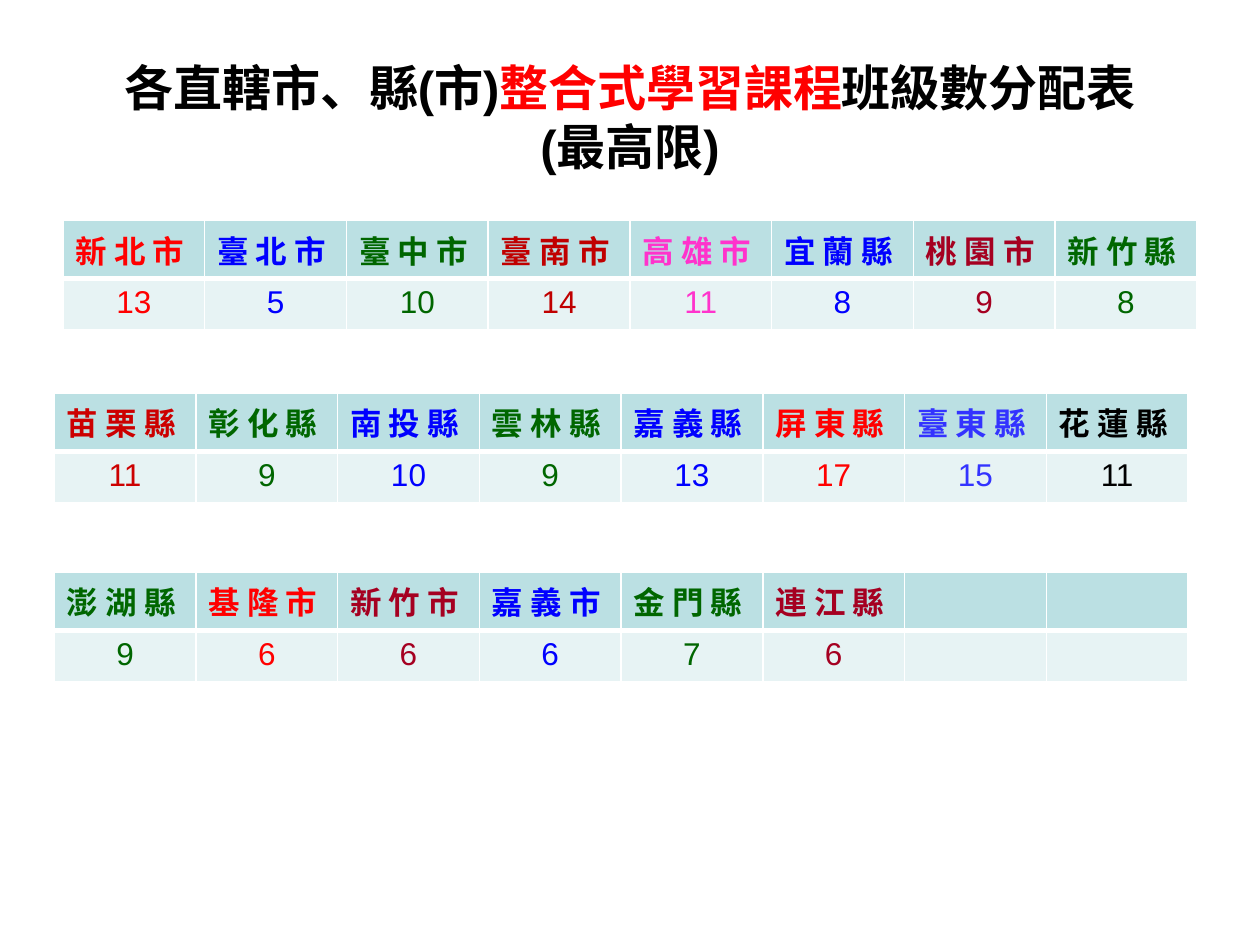
from lxml.etree import SubElement
from pptx import Presentation
from pptx.dml.color import RGBColor as Rgb
from pptx.enum.text import MSO_ANCHOR as Anchor, MSO_AUTO_SIZE as AutoSize, PP_ALIGN as Align
from pptx.oxml.ns import qn
from pptx.util import Inches, Pt

BLACK, WHITE, RED, BLUE, GREEN = "000000", "FFFFFF", "FF0000", "0000FF", "006600"
BRICK, PINK, WINE, SCARLET, VIOLET = "C00000", "FF33CC", "A50021", "CC0000", "3333FF"
HEADER_FILL, VALUE_FILL = "BBE0E3", "E7F3F4"
COLUMNS = 8

MUNICIPALITIES = [
    ("新 北 市", 13, RED), ("臺 北 市", 5, BLUE), ("臺 中 市", 10, GREEN),
    ("臺 南 市", 14, BRICK), ("高 雄 市", 11, PINK), ("宜 蘭 縣", 8, BLUE),
    ("桃 園 市", 9, WINE), ("新 竹 縣", 8, GREEN),
]
COUNTIES = [
    ("苗 栗 縣", 11, SCARLET), ("彰 化 縣", 9, GREEN), ("南 投 縣", 10, BLUE),
    ("雲 林 縣", 9, GREEN), ("嘉 義 縣", 13, BLUE), ("屏 東 縣", 17, RED),
    ("臺 東 縣", 15, VIOLET), ("花 蓮 縣", 11, BLACK),
]
ISLANDS_AND_CITIES = [
    ("澎 湖 縣", 9, GREEN), ("基 隆 市", 6, RED), ("新 竹 市", 6, WINE),
    ("嘉 義 市", 6, BLUE), ("金 門 縣", 7, GREEN), ("連 江 縣", 6, WINE),
]


def color(value):
    """Turn a hex string into a colour."""
    return Rgb.from_string(value)


def add_text(para, text, size=18, fill=BLACK, bold=False, align=None):
    """Add a formatted span to a paragraph."""
    if align is not None:
        para.alignment = align
    span = para.add_run()
    span.text = text
    span.font.name = "Arial"
    span.font.size = Pt(size)
    span.font.bold = bold
    span.font.color.rgb = color(fill)


def style_cell(cell, fill, top=1, bottom=1):
    """Give a cell white borders of the given widths and a solid fill."""
    properties = cell._tc.get_or_add_tcPr()
    for side, width in (("L", 1), ("R", 1), ("T", top), ("B", bottom)):
        line = SubElement(properties, qn(f"a:ln{side}"), w=str(Pt(width)))
        solid = SubElement(line, qn("a:solidFill"))
        SubElement(solid, qn("a:srgbClr"), val=WHITE)
    cell.fill.solid()
    cell.fill.fore_color.rgb = color(fill)


def add_title(page, left, top, width, height):
    """Place the two-line title with its red course name."""
    title = page.shapes.title
    title.left, title.top, title.width, title.height = map(Inches, (left, top, width, height))
    frame = title.text_frame
    frame.word_wrap = True
    frame.auto_size = AutoSize.NONE
    frame.vertical_anchor = Anchor.MIDDLE
    para = frame.paragraphs[0]
    add_text(para, "各直轄市、縣(市)", size=28, bold=True, align=Align.CENTER)
    add_text(para, "整合式學習課程", size=28, fill=RED, bold=True)
    add_text(para, "班級數分配表", size=28, bold=True)
    para.add_line_break()
    add_text(para, "(最高限)", size=28, bold=True)


def add_quota_table(page, regions, left, top, width, height):
    """Place a table of region names above their class quotas."""
    box = page.shapes.add_table(2, COLUMNS, *map(Inches, (left, top, width, height)))
    table = box.table
    for column in range(COLUMNS):
        header, value = table.cell(0, column), table.cell(1, column)
        style_cell(header, HEADER_FILL, bottom=3)
        style_cell(value, VALUE_FILL, top=3)
        if column < len(regions):
            name, quota, fill = regions[column]
            add_text(header.text_frame.paragraphs[0], name, fill=fill, bold=True)
            add_text(value.text_frame.paragraphs[0], str(quota), fill=fill, align=Align.CENTER)


def main():
    """Build and save the deck."""
    deck = Presentation()
    deck.slide_width, deck.slide_height = Inches(10), Inches(7.5)
    page = deck.slides.add_slide(deck.slide_layouts[5])
    add_title(page, 0.5, 0.3, 9, 1.25)
    add_quota_table(page, MUNICIPALITIES, 0.5, 1.75, 9, 0.81)
    add_quota_table(page, COUNTIES, 0.43, 3.12, 9, 0.81)
    add_quota_table(page, ISLANDS_AND_CITIES, 0.43, 4.54, 9, 0.81)
    deck.save("out.pptx")


if __name__ == "__main__":
    main()
